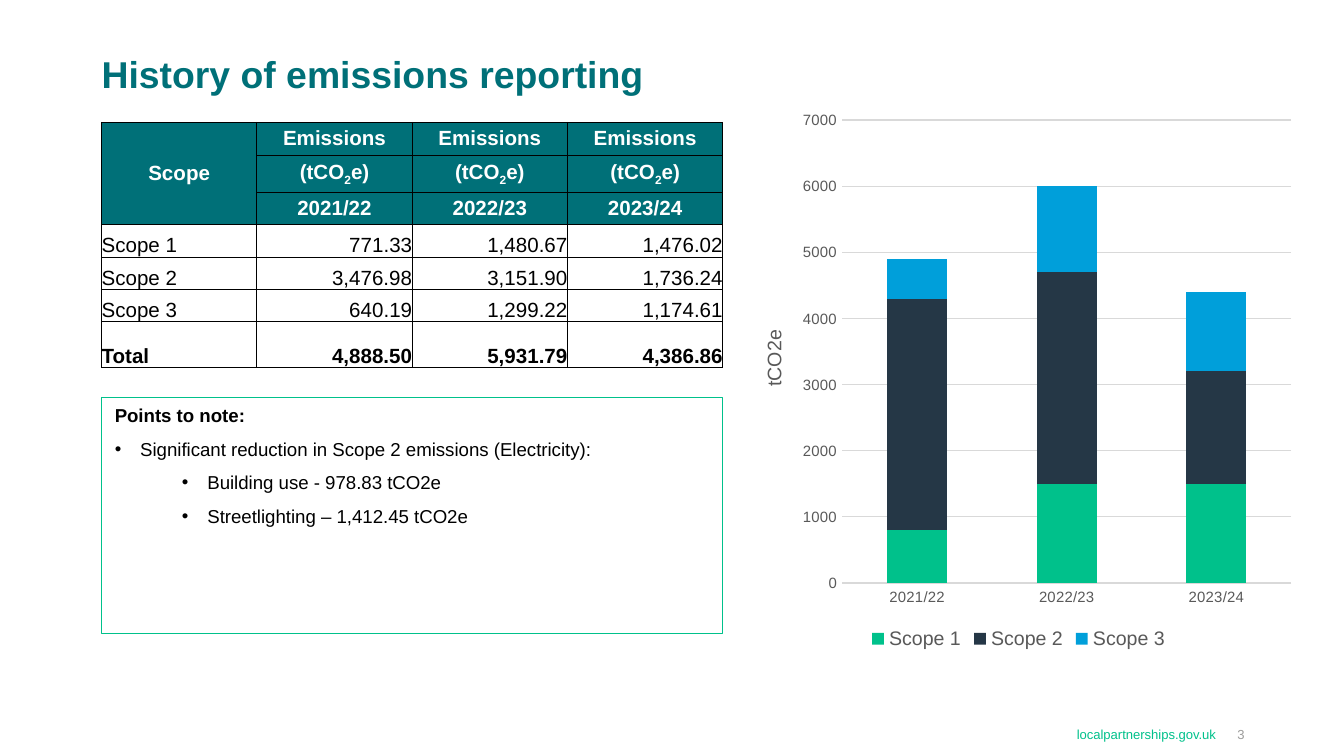
import dataclasses

import pptx
import pptx.chart.data
import pptx.dml.color
import pptx.enum.chart
import pptx.enum.shapes
import pptx.enum.text
import pptx.oxml
import pptx.oxml.ns
import pptx.util
from lxml import etree

Cm = pptx.util.Cm
Pt = pptx.util.Pt
ALIGN = pptx.enum.text.PP_ALIGN
ANCHOR = pptx.enum.text.MSO_ANCHOR
qn = pptx.oxml.ns.qn


@dataclasses.dataclass(frozen=True)
class Theme:
    font: str = "Arial"
    teal: str = "007078"
    green: str = "00C18B"
    navy: str = "253746"
    blue: str = "009FDA"
    black: str = "000000"
    white: str = "FFFFFF"
    grey: str = "9D9D9C"
    label: str = "595959"
    grid: str = "D9D9D9"
    title_size: float = 20
    table_size: float = 11
    legend_size: float = 10.5
    note_size: float = 10
    axis_size: float = 8
    footer_size: float = 7


THEME = Theme()
YEARS = ["2021/22", "2022/23", "2023/24"]
EMISSIONS = {
    "Scope 1": [771.33, 1480.67, 1476.02],
    "Scope 2": [3476.98, 3151.90, 1736.24],
    "Scope 3": [640.19, 1299.22, 1174.61],
}
TOTALS = [4888.50, 5931.79, 4386.86]


def rgb(color):
    return pptx.dml.color.RGBColor.from_string(color)


def style(font, size, color, bold=False):
    font.name, font.size, font.bold = THEME.font, Pt(size), bold
    font.color.rgb = rgb(color)


def add_line_of_text(slide, box, text, size, color, bold=False,
                     align=ALIGN.LEFT, anchor=ANCHOR.MIDDLE):
    frame = slide.shapes.add_textbox(*box).text_frame
    frame.word_wrap = True
    frame.margin_left = frame.margin_right = frame.margin_top = frame.margin_bottom = 0
    frame.vertical_anchor = anchor
    line = frame.paragraphs[0]
    line.text, line.alignment = text, align
    style(line.font, size, color, bold)


def border(cell):
    properties = cell._tc.get_or_add_tcPr()
    for index, side in enumerate(("lnL", "lnR", "lnT", "lnB")):
        edge = pptx.oxml.parse_xml(
            f'<a:{side} {pptx.oxml.ns.nsdecls("a")} w="6350"><a:solidFill>'
            f'<a:srgbClr val="{THEME.black}"/></a:solidFill></a:{side}>')
        properties.insert(index, edge)


def fill_cell(cell, text, align, color, bold=False, fill=None):
    """Write a cell; text between underscores is set as subscript."""
    cell.margin_left = cell.margin_right = cell.margin_top = cell.margin_bottom = 0
    cell.vertical_anchor = ANCHOR.MIDDLE if fill else ANCHOR.BOTTOM
    if fill:
        cell.fill.solid()
        cell.fill.fore_color.rgb = rgb(fill)
    else:
        cell.fill.background()
    border(cell)
    paragraph = cell.text_frame.paragraphs[0]
    paragraph.alignment = align
    for index, part in enumerate(text.split("_")):
        run = paragraph.add_run()
        run.text = part
        if index % 2:
            run._r.get_or_add_rPr().set("baseline", "-25000")
    style(paragraph.font, THEME.table_size, color, bold)


def add_emissions_table(slide, box):
    header = [["Scope"] + ["Emissions"] * 3, [""] + ["(tCO_2_e)"] * 3, [""] + YEARS]
    body = [[scope] + [f"{value:,.2f}" for value in values]
            for scope, values in {**EMISSIONS, "Total": TOTALS}.items()]
    rows = header + body
    frame = slide.shapes.add_table(len(rows), len(rows[0]), *box)
    table = frame.table
    table.first_row = table.horz_banding = False
    for index, row in enumerate(table.rows):
        row.height = Cm(0.62 if index < len(header) else 0.61)
    table.rows[1].height = Cm(0.7)
    table.rows[len(rows) - 1].height = Cm(0.87)
    for r, texts in enumerate(rows):
        for c, text in enumerate(texts):
            cell = table.cell(r, c)
            if r < len(header):
                fill_cell(cell, text, ALIGN.CENTER, THEME.white, True, THEME.teal)
            else:
                align = ALIGN.RIGHT if c else ALIGN.LEFT
                fill_cell(cell, text, align, THEME.black, r == len(rows) - 1)
    table.cell(0, 0).merge(table.cell(len(header) - 1, 0))


def add_points_to_note(slide, box):
    panel = slide.shapes.add_shape(pptx.enum.shapes.MSO_SHAPE.RECTANGLE, *box)
    panel.shadow.inherit = False
    panel.fill.background()
    panel.line.color.rgb = rgb(THEME.green)
    panel.line.width = Pt(0.75)
    frame = panel.text_frame
    frame.word_wrap = True
    frame.vertical_anchor = ANCHOR.TOP
    points = [
        ("Points to note:", None, 0),
        ("Significant reduction in Scope 2 emissions (Electricity):", Cm(0.48), 0),
        ("Building use - 978.83 tCO2e", Cm(1.75), 1),
        ("Streetlighting – 1,412.45 tCO2e", Cm(1.75), 1),
    ]
    for index, (text, indent, level) in enumerate(points):
        point = frame.add_paragraph() if index else frame.paragraphs[0]
        point.text, point.level, point.alignment = text, level, ALIGN.LEFT
        point.space_after = Pt(6)
        if indent:
            properties = point._p.get_or_add_pPr()
            properties.set("marL", str(indent))
            properties.set("indent", str(-Cm(0.48)))
            etree.SubElement(properties, qn("a:buFont")).set("typeface", THEME.font)
            etree.SubElement(properties, qn("a:buChar")).set("char", "•")
        style(point.font, THEME.note_size, THEME.black, bold=not indent)


def set_layout(parent, index, **fractions):
    """Place a chart part by fractions of the chart's size."""
    for old in parent.findall(qn("c:layout")):
        parent.remove(old)
    layout = etree.Element(qn("c:layout"))
    manual = etree.SubElement(layout, qn("c:manualLayout"))
    if "w" in fractions:
        etree.SubElement(manual, qn("c:layoutTarget")).set("val", "inner")
    for mode in ("xMode", "yMode"):
        etree.SubElement(manual, qn(f"c:{mode}")).set("val", "edge")
    for name, value in fractions.items():
        etree.SubElement(manual, qn(f"c:{name}")).set("val", str(value))
    parent.insert(index, layout)


def add_emissions_chart(slide, box):
    """Stack the scopes by year, rounded to hundreds."""
    data = pptx.chart.data.CategoryChartData(number_format="#,##0.00")
    data.categories = YEARS
    for scope, values in EMISSIONS.items():
        data.add_series(scope, [round(value, -2) for value in values])
    chart = slide.shapes.add_chart(
        pptx.enum.chart.XL_CHART_TYPE.COLUMN_STACKED, *box, data).chart
    style(chart.font, THEME.note_size, THEME.black)
    chart.has_title = False
    chart.has_legend = True
    chart.legend.position = pptx.enum.chart.XL_LEGEND_POSITION.BOTTOM
    chart.legend.include_in_layout = False
    style(chart.legend.font, THEME.legend_size, THEME.label)

    bars = chart.plots[0]
    bars.vary_by_categories = False
    bars.gap_width, bars.overlap = 150, 100
    for series, color in zip(bars.series, (THEME.green, THEME.navy, THEME.blue)):
        series.format.fill.solid()
        series.format.fill.fore_color.rgb = rgb(color)

    years, amounts = chart.category_axis, chart.value_axis
    for axis in (years, amounts):
        axis.major_tick_mark = axis.minor_tick_mark = pptx.enum.chart.XL_TICK_MARK.NONE
        style(axis.tick_labels.font, THEME.axis_size, THEME.label)
    amounts.minimum_scale, amounts.maximum_scale, amounts.major_unit = 0, 7000, 1000
    amounts.tick_labels.number_format = "0"
    amounts.tick_labels.number_format_is_linked = False
    amounts.format.line.fill.background()
    for line in (years.format.line, amounts.major_gridlines.format.line):
        line.color.rgb = rgb(THEME.grid)
        line.width = Pt(0.75)
    unit = amounts.axis_title.text_frame.paragraphs[0]
    unit.text = "tCO2e"
    style(unit.font, THEME.legend_size, THEME.label)
    set_layout(amounts.axis_title._element, 1, x=0.04, y=0.41)
    set_layout(chart._chartSpace.chart.plotArea, 0, x=0.19, y=0.04, w=0.79, h=0.83)


def add_footer(slide, left, top, width, height):
    number_width = Cm(0.54)
    add_line_of_text(slide, (left, top, width - number_width, height),
                     "localpartnerships.gov.uk", THEME.footer_size, THEME.green,
                     align=ALIGN.RIGHT)
    add_line_of_text(slide, (left + width - number_width, top, number_width, height),
                     "3", THEME.footer_size, THEME.grey, align=ALIGN.RIGHT)


def main():
    deck = pptx.Presentation()
    deck.slide_width, deck.slide_height = Cm(25.4), Cm(14.29)
    slide = deck.slides.add_slide(deck.slide_layouts[6])
    left, column = Cm(1.92), Cm(11.74)
    add_line_of_text(slide, (left, Cm(0.97), Cm(21.59), Cm(0.86)),
                     "History of emissions reporting", THEME.title_size, THEME.teal,
                     bold=True, anchor=ANCHOR.TOP)
    add_footer(slide, Cm(15.19), Cm(13.72), Cm(8.33), Cm(0.3))
    add_points_to_note(slide, (left, Cm(7.51), column, Cm(4.47)))
    add_emissions_table(slide, (left, Cm(2.31), column, Cm(4.62)))
    add_emissions_chart(slide, (Cm(13.88), Cm(1.85), Cm(10.74), Cm(10.54)))
    deck.save("out.pptx")


if __name__ == "__main__":
    main()
